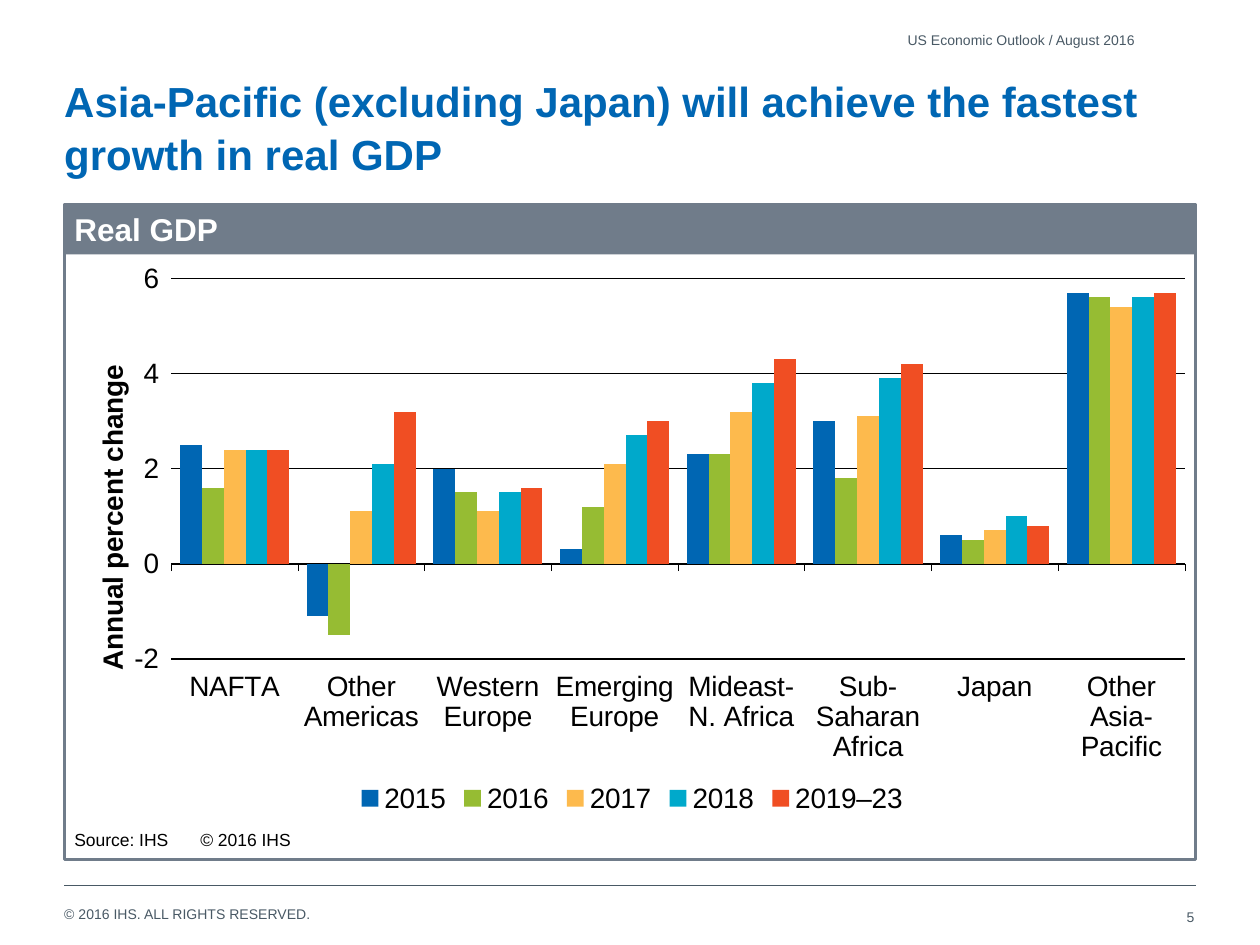
from lxml import etree
from pptx import Presentation
from pptx.chart.data import CategoryChartData
from pptx.dml.color import RGBColor
from pptx.enum.chart import XL_CHART_TYPE as ChartType, XL_LEGEND_POSITION as LegendPosition
from pptx.enum.chart import XL_TICK_LABEL_POSITION as LabelPosition, XL_TICK_MARK as TickMark
from pptx.enum.shapes import MSO_CONNECTOR as Connector, MSO_SHAPE as Shape
from pptx.enum.text import MSO_ANCHOR as Anchor, MSO_AUTO_SIZE as AutoSize, PP_ALIGN as Align
from pptx.oxml import parse_xml
from pptx.oxml.ns import nsdecls, qn
from pptx.util import Inches, Pt

FONT = "Arial"
BLUE, SLATE, GREY, BLACK, WHITE = "0066B3", "707C8A", "495965", "000000", "FFFFFF"
LEFT, WIDTH = 0.51, 8.98

CATEGORIES = ["NAFTA", "Other Americas", "Western Europe", "Emerging Europe",
              "Mideast-N. Africa", "Sub-Saharan Africa", "Japan", "Other Asia-Pacific"]
SERIES = [
    ("2015", BLUE, [2.5, -1.1, 2, 0.3, 2.3, 3, 0.6, 5.7]),
    ("2016", "96BC33", [1.6, -1.5, 1.5, 1.2, 2.3, 1.8, 0.5, 5.6]),
    ("2017", "FDBA4D", [2.4, 1.1, 1.1, 2.1, 3.2, 3.1, 0.7, 5.4]),
    ("2018", "00A9CB", [2.4, 2.1, 1.5, 2.7, 3.8, 3.9, 1, 5.6]),
    ("2019–23", "F04E23", [2.4, 3.2, 1.6, 3, 4.3, 4.2, 0.8, 5.7]),
]


def color(hex_value):
    return RGBColor.from_string(hex_value)


def box_inches(box):
    return [Inches(length) for length in box]


def set_font(font, size, hex_value, bold=False):
    font.name, font.size, font.bold = FONT, Pt(size), bold
    font.color.rgb = color(hex_value)


def write(shape, text, size, hex_value, bold=False, align=Align.LEFT,
          anchor=Anchor.MIDDLE, margins=(0, 0)):
    frame = shape.text_frame
    frame.word_wrap = True
    frame.auto_size = AutoSize.NONE
    frame.vertical_anchor = anchor
    frame.margin_left = frame.margin_right = Inches(margins[0])
    frame.margin_top = frame.margin_bottom = Inches(margins[1])
    paragraph = frame.paragraphs[0]
    paragraph.text = text
    paragraph.alignment = align
    set_font(paragraph.font, size, hex_value, bold)
    return paragraph


def add_text(slide, box, text, size, hex_value, **options):
    return write(slide.shapes.add_textbox(*box_inches(box)), text, size, hex_value, **options)


def add_rectangle(slide, box):
    shape = slide.shapes.add_shape(Shape.RECTANGLE, *box_inches(box))
    shape.shadow.inherit = False
    return shape


def set_layout(parent, index, chart_size, target=None, **lengths):
    """Fix a chart part at lengths in inches from the chart's top left corner."""
    for old in parent.findall(qn("c:layout")):
        parent.remove(old)
    whole = dict(zip("xywh", chart_size * 2))
    inner = f'<c:layoutTarget val="{target}"/>' if target else ""
    inner += "".join(f'<c:{side}Mode val="edge"/>' for side in "xy")
    inner += "".join(f'<c:{side} val="{length / whole[side]}"/>'
                     for side, length in lengths.items())
    parent.insert(index, parse_xml(
        f'<c:layout {nsdecls("c")}><c:manualLayout>{inner}</c:manualLayout></c:layout>'))


def add_title(slide, box):
    title = slide.shapes.title
    title.left, title.top, title.width, title.height = box_inches(box)
    paragraph = write(
        title, "Asia-Pacific (excluding Japan) will achieve the fastest growth in real GDP",
        24, BLUE, bold=True, anchor=Anchor.TOP)
    paragraph.line_spacing = 1.05


def style_axes(chart, chart_size):
    category_axis = chart.category_axis
    category_axis.tick_label_position = LabelPosition.LOW
    category_axis.major_tick_mark = TickMark.OUTSIDE
    category_axis.format.line.color.rgb = color(BLACK)
    category_axis.format.line.width = Pt(0.25)

    value_axis = chart.value_axis
    value_axis.minimum_scale, value_axis.maximum_scale, value_axis.major_unit = -2, 6, 2
    value_axis.major_tick_mark = TickMark.OUTSIDE
    value_axis.format.line.fill.background()
    value_axis.tick_labels.number_format = "0"
    value_axis.tick_labels.number_format_is_linked = False
    gridline = value_axis.major_gridlines.format.line
    gridline.color.rgb = color(BLACK)
    gridline.width = Pt(1)
    for axis in (category_axis, value_axis):
        set_font(axis.tick_labels.font, 16, BLACK)
        # Level labels wrap instead of slanting
        label_body = axis._element.find(qn("c:txPr")).find(qn("a:bodyPr"))
        label_body.set("rot", "0")
        label_body.set("vert", "horz")

    axis_title = value_axis.axis_title
    paragraph = axis_title.text_frame.paragraphs[0]
    paragraph.text = "Annual percent change"
    set_font(paragraph.font, 16, BLACK, bold=True)
    set_layout(axis_title._element, 1, chart_size, x=0.08, y=0.84)


def add_growth_chart(slide, box):
    data = CategoryChartData(number_format="0.0")
    data.categories = CATEGORIES
    for name, _, values in SERIES:
        data.add_series(name, values)
    chart = slide.shapes.add_chart(
        ChartType.COLUMN_CLUSTERED, *box_inches(box), data).chart
    set_font(chart.font, 16, BLACK)
    chart.has_title = False
    chart.has_legend = True
    chart.legend.position = LegendPosition.BOTTOM
    chart.legend.include_in_layout = False
    set_font(chart.legend.font, 16, BLACK)

    plot = chart.plots[0]
    plot.gap_width, plot.overlap, plot.vary_by_categories = 80, 0, False
    for series, (_, hex_value, _) in zip(plot.series, SERIES):
        series.invert_if_negative = False
        series.format.fill.solid()
        series.format.fill.fore_color.rgb = color(hex_value)
    chart_size = box[2:]
    style_axes(chart, chart_size)
    set_layout(chart._chartSpace.chart.plotArea, 0, chart_size, "inner",
               x=0.73, y=0.19, w=8.05, h=3.02)


def add_panel(slide, box):
    left, top, width, height = box
    header_height, source_height = 0.4, 0.31

    # Chart between the header and the source line
    chart_top = top + header_height
    add_growth_chart(slide, (left + 0.12, chart_top, width - 0.2,
                             height - header_height - source_height - 0.01))

    # Header bar
    header = add_rectangle(slide, (left, top, width, header_height))
    header.fill.solid()
    header.fill.fore_color.rgb = color(SLATE)
    header.line.fill.background()
    write(header, "Real GDP", 18, WHITE, bold=True, margins=(0.08, 0.04))

    # Frame
    frame = add_rectangle(slide, box)
    frame.fill.background()
    frame.line.color.rgb = color(SLATE)
    frame.line.width = Pt(1.5)

    # Source line, with a tab stop before the copyright
    source = add_text(slide, (left, top + height - source_height, width, source_height),
                      "Source: IHS\t© 2016 IHS", 10, BLACK, margins=(0.08, 0.08))
    tabs = parse_xml(f'<a:tabLst {nsdecls("a")}><a:tab pos="{Inches(1)}" algn="l"/></a:tabLst>')
    source._p.get_or_add_pPr().insert(0, tabs)


def add_footer(slide, box):
    left, top, width, height = box
    rule = slide.shapes.add_connector(
        Connector.STRAIGHT, *box_inches((left, top, left + width, top)))
    rule.line.color.rgb = color(GREY)
    rule.line.width = Pt(0.5)
    etree.SubElement(rule._element.spPr, qn("a:effectLst"))
    add_text(slide, (left, top + 0.16, 6.85, 0.13), "© 2016 IHS. ALL RIGHTS RESERVED.",
             8, GREY, anchor=Anchor.TOP)
    add_text(slide, (left + width - 2.27, top + 0.05, 2.26, height - 0.05), "5",
             8, GREY, align=Align.RIGHT)


def main():
    presentation = Presentation()
    presentation.slide_width, presentation.slide_height = Inches(10), Inches(7.5)
    slide = presentation.slides.add_slide(presentation.slide_layouts[5])  # Title Only
    add_text(slide, (LEFT, 0.2, 8.5, 0.24), "US Economic Outlook / August 2016",
             8, GREY, align=Align.RIGHT)
    add_title(slide, (LEFT, 0.58, WIDTH, 0.87))
    add_panel(slide, (LEFT, 1.62, WIDTH, 5.2))
    add_footer(slide, (LEFT, 7.03, WIDTH, 0.45))
    presentation.save("out.pptx")


if __name__ == "__main__":
    main()
